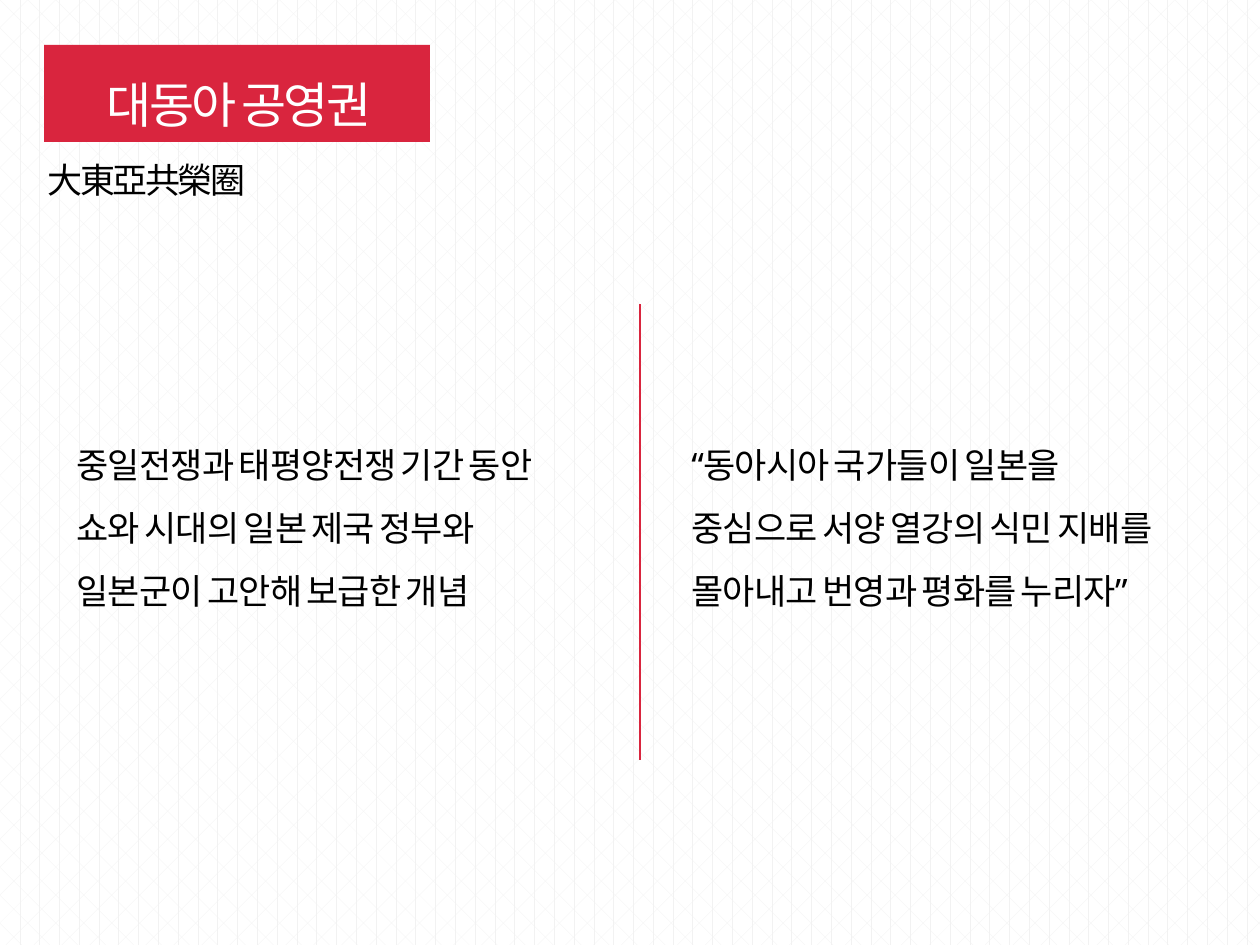
from lxml import etree
from pptx import Presentation
from pptx.dml.color import RGBColor
from pptx.enum.dml import MSO_PATTERN
from pptx.enum.shapes import MSO_CONNECTOR, MSO_SHAPE
from pptx.enum.text import MSO_ANCHOR, PP_ALIGN
from pptx.oxml.ns import qn
from pptx.util import Emu, Pt

RECT = MSO_SHAPE.RECTANGLE
LINE = MSO_CONNECTOR.STRAIGHT
DIVOT = MSO_PATTERN.DIVOT
MID = MSO_ANCHOR.MIDDLE
LEFT, MIDDLE = PP_ALIGN.LEFT, PP_ALIGN.CENTER
RED = RGBColor(0xD9, 0x25, 0x3E)
WHITE = RGBColor(0xFF, 0xFF, 0xFF)
BLACK = RGBColor(0, 0, 0)
GRAY = RGBColor(0xF2, 0xF2, 0xF2)
FONT = "Noto Sans"


def px(*vals):
    return [Emu(round(v * 914400 / 126)) for v in vals]


def add_text(home, area, paras, size=20, gap=9, color=BLACK, align=LEFT, track=-50):
    box = home.add_textbox(*px(*area))
    frame = box.text_frame
    frame.word_wrap = True
    frame.vertical_anchor = MID
    for i, words in enumerate(paras):
        para = frame.add_paragraph() if i else frame.paragraphs[0]
        para.alignment = align
        para.line_spacing = 1.5
        for j, word in enumerate(words.split()):
            parts = [(" ", gap), (word, size)] if j else [(word, size)]
            for part, pts in parts:
                run = para.add_run()
                run.text = part
                run.font.size = Pt(pts)
                run.font.name = FONT
                run.font.color.rgb = color
                props = run.font._element
                props.set("spc", str(track))
                etree.SubElement(props, qn("a:ea"), typeface=FONT)


deck = Presentation()
deck.slide_width, deck.slide_height = px(1260, 945)
slide = deck.slides.add_slide(deck.slide_layouts[6])
back = slide.background.fill
back.patterned()
back.pattern = DIVOT
back.fore_color.rgb = GRAY
back.back_color.rgb = WHITE

title = slide.shapes.add_group_shape()
banner = title.shapes.add_shape(RECT, *px(44, 45, 386, 97))
banner.shadow.inherit = False
banner.fill.solid()
banner.fill.fore_color.rgb = RED
banner.line.fill.background()
add_text(title.shapes, (54, 45, 370, 89), ["대동아 공영권"],
         size=28, gap=11, color=WHITE, align=MIDDLE, track=-150)
add_text(slide.shapes, (-15, 125, 323, 89), ["大東亞共榮圈"],
         align=MIDDLE, track=-150)

add_text(slide.shapes, (679, 373, 525, 289), [
    "“동아시아 국가들이 일본을",
    "중심으로 서양 열강의 식민 지배를 몰아내고 번영과 평화를 누리자”",
])

rule = slide.shapes.add_connector(LINE, *px(640, 760, 640, 304))
rule.line.color.rgb = RED
rule.line.width = Pt(0.75)
etree.SubElement(rule._element.spPr, qn("a:effectLst"))

add_text(slide.shapes, (64, 304, 525, 427), [
    "중일전쟁과 태평양전쟁 기간 동안 쇼와 시대의 일본 제국 정부와",
    "일본군이 고안해 보급한 개념",
])

deck.save("out.pptx")
